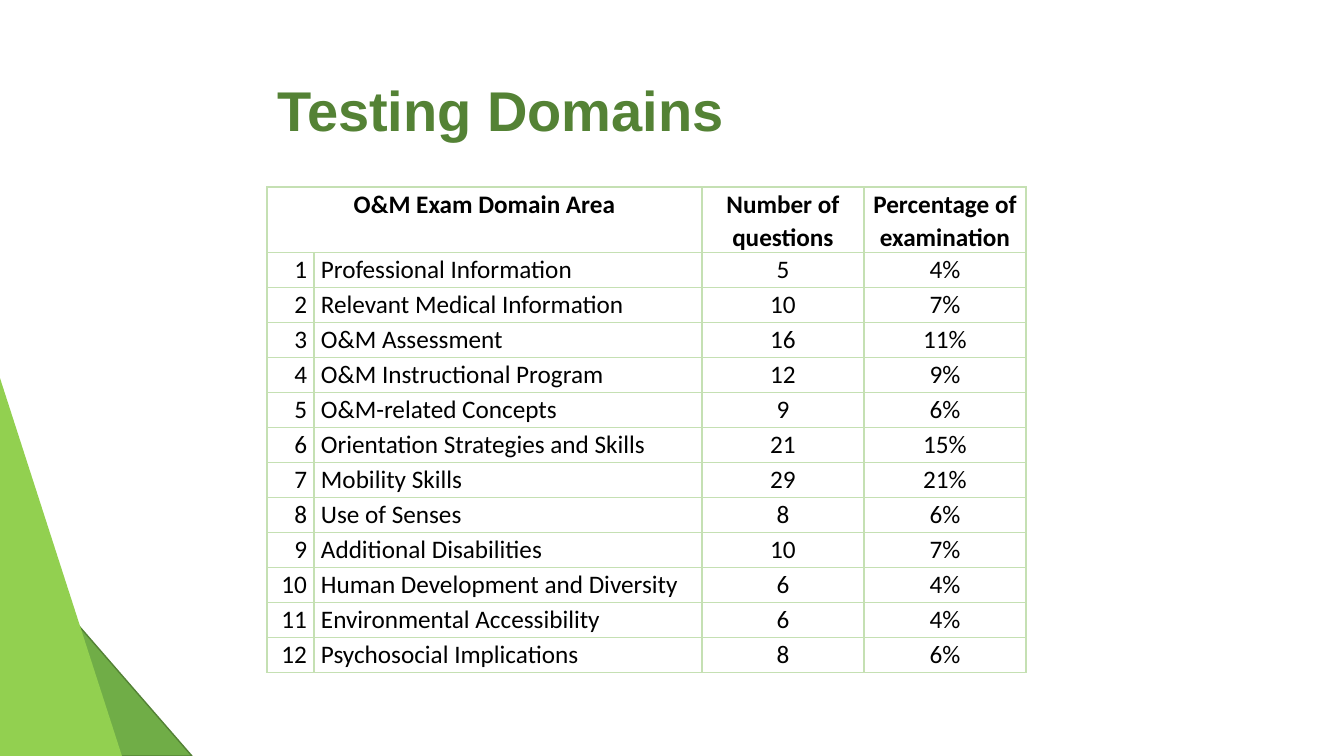
from lxml import etree
from pptx import Presentation, util as u
from pptx.dml.color import RGBColor
from pptx.enum import shapes, text
from pptx.oxml.ns import qn

LEAF = RGBColor(0x70, 0xAD, 0x47)
EDGE = RGBColor(0x53, 0x81, 0x35)
LIME = RGBColor(0x92, 0xD0, 0x50)
HEAD = RGBColor(0x54, 0x82, 0x35)
RULE = RGBColor(0xC5, 0xE0, 0xB3)
BLACK = RGBColor(0, 0, 0)

LEFT, MID, RIGHT = text.PP_ALIGN.LEFT, text.PP_ALIGN.CENTER, text.PP_ALIGN.RIGHT


def px(n):
    return u.Emu(round(n * 914400 / 100.8))


def write(para, words, font, size, color, bold, align, space):
    para.alignment = align
    para.line_spacing = space
    run = para.add_run()
    run.text = words
    run.font.name = font
    run.font.size = u.Pt(size)
    run.font.bold = bold
    run.font.color.rgb = color


deck = Presentation()
deck.slide_width, deck.slide_height = px(1344), px(756)
slide = deck.slides.add_slide(deck.slide_layouts[5])

# Corner triangles, both standing on the bottom edge
for wide, high, fill, line in [(192, 221, LEAF, EDGE), (122, 378, LIME, None)]:
    tri = slide.shapes.add_shape(
        shapes.MSO_SHAPE.ISOSCELES_TRIANGLE, 0, px(756 - high), px(wide), px(high))
    tri.adjustments[0] = 0
    tri.shadow.inherit = False
    tri.fill.solid()
    tri.fill.fore_color.rgb = fill
    if line:
        tri.line.color.rgb = line
        tri.line.width = u.Pt(1)
    else:
        tri.line.fill.background()

# Title
title = slide.shapes.title
title.left, title.top, title.width, title.height = px(267), px(40), px(840), px(146)
title.text_frame.vertical_anchor = text.MSO_ANCHOR.MIDDLE
write(title.text_frame.paragraphs[0], "Testing Domains", "Arial", 40, HEAD, True, LEFT, 0.9)

# Domain table
areas = [
    ("Professional Information", 5, 4),
    ("Relevant Medical Information", 10, 7),
    ("O&M Assessment", 16, 11),
    ("O&M Instructional Program", 12, 9),
    ("O&M-related Concepts", 9, 6),
    ("Orientation Strategies and Skills", 21, 15),
    ("Mobility Skills", 29, 21),
    ("Use of Senses", 8, 6),
    ("Additional Disabilities", 10, 7),
    ("Human Development and Diversity", 6, 4),
    ("Environmental Accessibility", 6, 4),
    ("Psychosocial Implications", 8, 6),
]
rows = [("O&M Exam Domain Area", "", "Number of questions", "Percentage of examination")]
for num, (area, count, share) in enumerate(areas, 1):
    rows.append((str(num), area, str(count), f"{share}%"))

frame = slide.shapes.add_table(len(rows), 4, px(267), px(187), px(759), px(482))
table = frame.table
table.first_row = table.horz_banding = False
for col, wide in zip(table.columns, (47, 388, 162, 162)):
    col.width = px(wide)
for i, row in enumerate(table.rows):
    row.height = px(35 if i else 62)
table.cell(0, 0).merge(table.cell(0, 1))

for i, row in enumerate(rows):
    for j, words in enumerate(row):
        cell = table.cell(i, j)
        cell.margin_left = cell.margin_right = px(7)
        cell.margin_top = cell.margin_bottom = 0
        # Cell borders
        props = cell._tc.get_or_add_tcPr()
        for side in ("lnL", "lnR", "lnT", "lnB"):
            line = etree.SubElement(props, qn("a:" + side), w=str(u.Pt(1)))
            paint = etree.SubElement(line, qn("a:solidFill"))
            etree.SubElement(paint, qn("a:srgbClr"), val=str(RULE))
        cell.fill.background()
        if words:
            align = (RIGHT, LEFT, MID, MID)[j] if i else MID
            write(cell.text_frame.paragraphs[0], words, "Calibri", 18, BLACK,
                  i == 0, align, 1.07)

deck.save("out.pptx")
